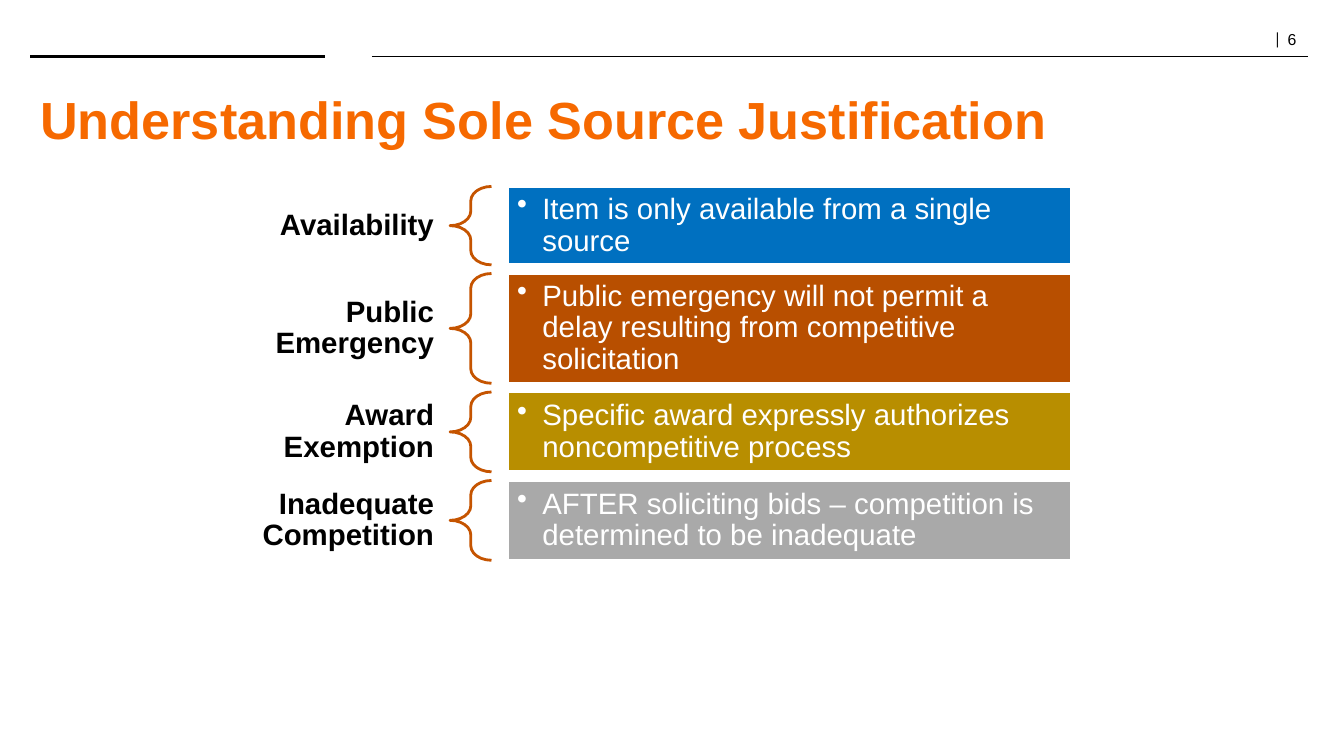
from dataclasses import dataclass

from lxml import etree
from pptx import Presentation
from pptx.dml.color import RGBColor
from pptx.enum.shapes import MSO_CONNECTOR, MSO_SHAPE
from pptx.enum.text import MSO_ANCHOR, PP_ALIGN
from pptx.oxml.ns import qn
from pptx.util import Pt

MIDDLE = MSO_ANCHOR.MIDDLE
LEFT, RIGHT = PP_ALIGN.LEFT, PP_ALIGN.RIGHT
RECTANGLE, BRACE = MSO_SHAPE.RECTANGLE, MSO_SHAPE.LEFT_BRACE
STRAIGHT = MSO_CONNECTOR.STRAIGHT


@dataclass
class Theme:
    font: str = "Arial"
    divider_font: str = "Cambria"
    black: str = "000000"
    white: str = "FFFFFF"
    title: str = "F66900"
    brace: str = "C55400"
    title_size: float = 37.3
    body_size: float = 21
    divider_size: float = 12
    number_size: float = 11.3


theme = Theme()


def color(code):
    return RGBColor.from_string(code)


def style(font, size, code, bold=False, name=theme.font):
    font.name, font.size, font.bold = name, Pt(size), bold
    font.color.rgb = color(code)


deck = Presentation()
deck.slide_width, deck.slide_height = Pt(960), Pt(540)
page = deck.slides.add_slide(deck.slide_layouts[6])

# Header rules
for start, end, weight in [(21.6, 232, 2), (265.7, 934, 1)]:
    rule = page.shapes.add_connector(STRAIGHT, Pt(start), Pt(40.4), Pt(end), Pt(40.4))
    rule.line.color.rgb = color(theme.black)
    rule.line.width = Pt(weight)
    etree.SubElement(rule._element.spPr, qn("a:effectLst"))

# Page number
box = page.shapes.add_textbox(Pt(903.6), Pt(20), Pt(50), Pt(19))
box.text_frame.word_wrap = True
para = box.text_frame.paragraphs[0]
para.line_spacing = 0.8
for text, size, name in [("|  ", theme.divider_size, theme.divider_font),
                         ("6", theme.number_size, theme.font)]:
    span = para.add_run()
    span.text = text
    style(span.font, size, theme.black, name=name)

# Title
box = page.shapes.add_textbox(Pt(21.6), Pt(57.6), Pt(816), Pt(54.7))
box.text_frame.word_wrap = True
box.text_frame.vertical_anchor = MIDDLE
para = box.text_frame.paragraphs[0]
para.text = "Understanding Sole Source Justification"
style(para.font, theme.title_size, theme.title, bold=True)

# Justifications: label, brace and explanation in each row
justifications = [
    ("Availability", "Item is only available from a single source", "0070C0", 56),
    ("Public Emergency", "Public emergency will not permit a delay resulting "
     "from competitive solicitation", "B84F00", 78.4),
    ("Award Exemption", "Specific award expressly authorizes noncompetitive process",
     "B88E00", 57),
    ("Inadequate Competition", "AFTER soliciting bids – competition is determined "
     "to be inadequate", "A9A9A9", 57),
]
row_gap = 6.2
top = 133.2
for label, explanation, fill, height in justifications:
    label_box = page.shapes.add_textbox(Pt(173.5), Pt(top), Pt(148), Pt(height))

    brace = page.shapes.add_shape(BRACE, Pt(321.5), Pt(top), Pt(29.6), Pt(height))
    brace.shadow.inherit = False
    brace.adjustments[0] = 0.35
    brace.fill.background()
    brace.line.color.rgb = color(theme.brace)
    brace.line.width = Pt(2)

    panel = page.shapes.add_shape(RECTANGLE, Pt(362.9), Pt(top), Pt(402.5), Pt(height))
    panel.shadow.inherit = False
    panel.fill.solid()
    panel.fill.fore_color.rgb = color(fill)
    panel.line.color.rgb = color(theme.white)
    panel.line.width = Pt(2)

    for shape, text, align, side, edge, code in [
            (label_box, label, RIGHT, 11.5, 4.3, theme.black),
            (panel, explanation, LEFT, 6.5, 6.5, theme.white)]:
        frame = shape.text_frame
        frame.word_wrap = True
        frame.vertical_anchor = MIDDLE
        frame.margin_left = frame.margin_right = Pt(side)
        frame.margin_top = frame.margin_bottom = Pt(edge)
        para = frame.paragraphs[0]
        para.text = text
        para.alignment = align
        para.line_spacing = 0.9
        if shape is panel:
            properties = para._p.get_or_add_pPr()
            properties.set("marL", str(Pt(18)))
            properties.set("indent", str(Pt(-18)))
            etree.SubElement(properties, qn("a:buChar"), char="•")
        style(para.font, theme.body_size, code, bold=shape is label_box)

    top += height + row_gap

deck.save("out.pptx")
